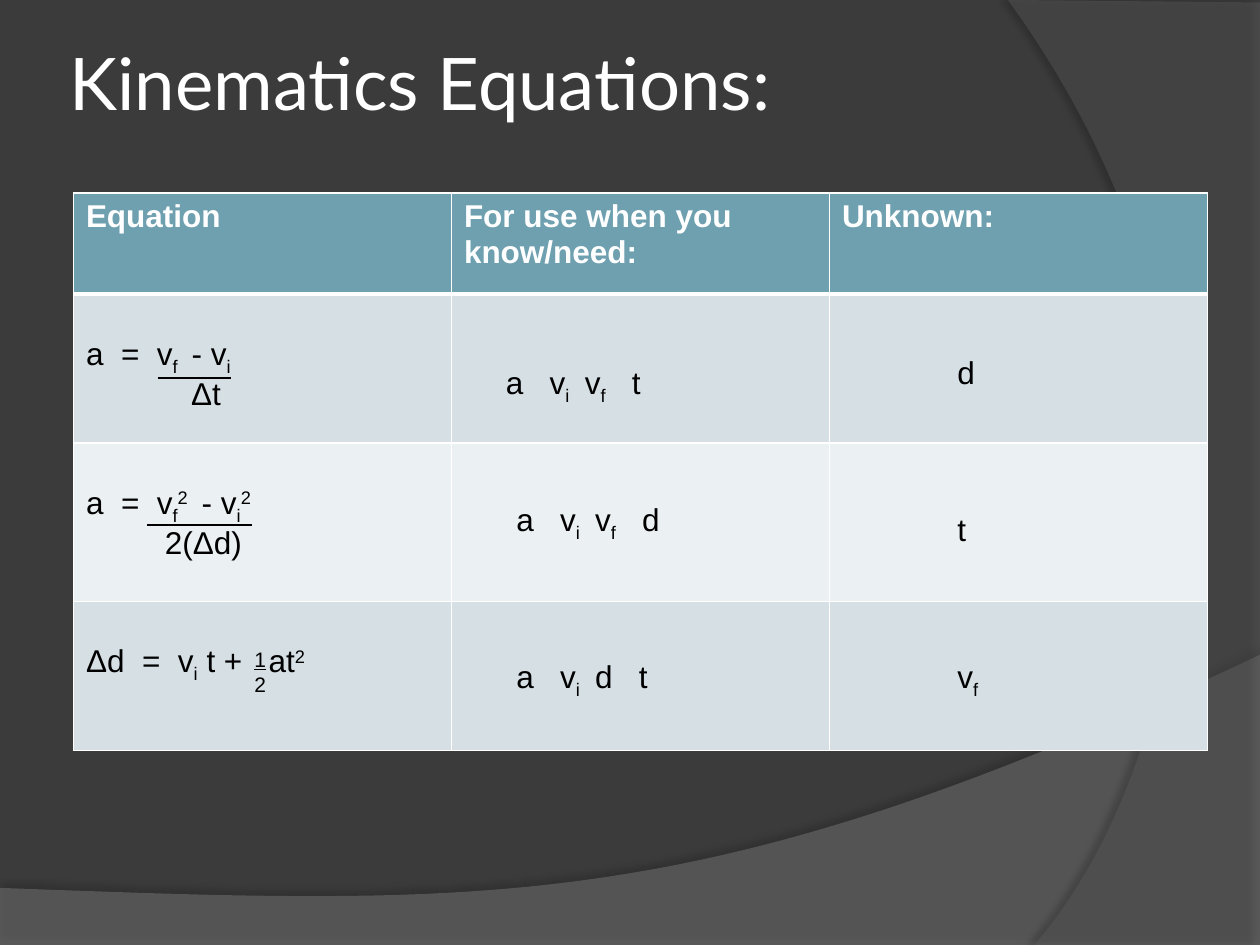
from dataclasses import dataclass

from lxml import etree
from pptx import Presentation
from pptx.dml.color import RGBColor
from pptx.enum.shapes import MSO_CONNECTOR
from pptx.enum.text import MSO_ANCHOR, MSO_AUTO_SIZE
from pptx.oxml.ns import qn
from pptx.util import Cm, Pt

STRAIGHT = MSO_CONNECTOR.STRAIGHT
MIDDLE = MSO_ANCHOR.MIDDLE
GROW = MSO_AUTO_SIZE.SHAPE_TO_FIT_TEXT

WIDTH, HEIGHT = 25.4, 19.05
BASELINES = {"_": "-25000", "^": "30000"}
WHITE, BLACK, HEADER_FILL = "FFFFFF", "000000", "6EA0B0"
BAND_FILLS = ("D5DFE4", "EBF0F2")
TABLE_LEFT, TABLE_TOP, COLUMN_WIDTH = 1.48, 3.89, 7.62
ROW_HEIGHTS = (2.04, 3, 3.2, 3)


@dataclass
class Equation:
    numerator: tuple[str, ...]
    denominator: str = ""
    indent: float = 0


@dataclass
class Label:
    left: float
    top: float
    width: float
    symbols: tuple[str, ...]


@dataclass
class Swoosh:
    """Outline of corner points closed by one cubic curve."""
    corners: list[tuple[float, float]]
    controls: list[tuple[float, float]]
    fill: str
    opacity: int
    shadow_opacity: int
    shadow_direction: int


HEADINGS = ("Equation", "For use when you know/need:", "Unknown:")
EQUATIONS = (
    Equation(("a  =  v", "_f ", " - v", "_i"), "Δt", 2.12),
    Equation(("a  =  v", "_f", "^2 ", " - v", "_i", "^2"), "2(Δd)", 1.59),
    Equation(("Δd  =  v", "_i", " t +   at", "^2")),
)
FRACTION_BARS = ((3.18, 4.66, 7.62), (2.96, 5.08, 10.58))
LABELS = (
    Label(9.95, 7.2, 3.68, ("a   v", "_i   ", "v", "_f", "   t")),
    Label(10.16, 9.95, 3.86, ("a   v", "_i   ", "v", "_f", "   d")),
    Label(10.16, 13.12, 3.61, ("a   v", "_i   ", "d   t")),
    Label(19.05, 6.99, 0.86, ("d",)),
    Label(19.05, 10.16, 0.86, ("t",)),
    Label(19.05, 13.12, 1.14, ("v", "_f")),
)
SWOOSHES = (
    Swoosh([(0, 17.9), (0, HEIGHT), (WIDTH, HEIGHT), (WIDTH, 13.2)],
           [(14.2, 18.52), (9.93, 18.26), (0, 17.9)], "7F7F7F", 45, 35, 270),
    Swoosh([(WIDTH, 0.05), (WIDTH, HEIGHT), (20.85, HEIGHT)],
           [(23.75, 15.72), (25.86, 7.62), (20.32, 0)], "5E5E5E", 40, 45, 180),
)


def color(value: str) -> RGBColor:
    return RGBColor.from_string(value)


def add_node(parent, tag: str, **attributes):
    return etree.SubElement(parent, qn(tag), attributes)


def write(paragraph, *pieces: str, size: float = 18, font: str = "Arial",
          fill: str = BLACK, bold: bool = False, underline: bool = False) -> None:
    """Add one run per piece; a leading _ lowers it and a leading ^ raises it."""
    for piece in pieces:
        run = paragraph.add_run()
        baseline = BASELINES.get(piece[0])
        run.text = piece[1:] if baseline else piece
        run.font.size = Pt(size)
        run.font.name = font
        run.font.bold = bold
        run.font.underline = underline
        run.font.color.rgb = color(fill)
        if baseline:
            run._r.get_or_add_rPr().set("baseline", baseline)


def add_text_frame(slide, left: float, top: float, width: float, height: float,
                   wrap: bool = True):
    frame = slide.shapes.add_textbox(Cm(left), Cm(top), Cm(width), Cm(height)).text_frame
    frame.word_wrap = wrap
    return frame


def add_swoosh(slide, swoosh: Swoosh, steps: int = 48) -> None:
    curve = [swoosh.corners[-1], *swoosh.controls]
    points = list(swoosh.corners)
    for step in range(1, steps + 1):
        t = step / steps
        weights = ((1 - t) ** 3, 3 * t * (1 - t) ** 2, 3 * t * t * (1 - t), t ** 3)
        points.append(tuple(sum(w * p[axis] for w, p in zip(weights, curve))
                            for axis in (0, 1)))
    points = [(Cm(x), Cm(y)) for x, y in points]
    builder = slide.shapes.build_freeform(*points[0])
    builder.add_line_segments(points[1:], close=True)
    shape = builder.convert_to_shape()
    shape.fill.solid()
    shape.fill.fore_color.rgb = color(swoosh.fill)
    shape.line.fill.background()
    shape.shadow.inherit = False
    properties = shape._element.spPr
    add_node(properties.find(qn("a:solidFill"))[0], "a:alpha", val=str(swoosh.opacity * 1000))
    shadow = add_node(properties.find(qn("a:effectLst")), "a:outerShdw",
                      blurRad=str(Pt(4)), dist=str(Pt(4)),
                      dir=str(swoosh.shadow_direction * 60000), rotWithShape="0")
    shadow_color = add_node(shadow, "a:srgbClr", val=BLACK)
    add_node(shadow_color, "a:alpha", val=str(swoosh.shadow_opacity * 1000))


def style_cell(cell, fill: str, top: float = 1, bottom: float = 1) -> None:
    properties = cell._tc.get_or_add_tcPr()
    for side, width in (("L", 1), ("R", 1), ("T", top), ("B", bottom)):
        line = add_node(properties, f"a:ln{side}", w=str(Pt(width)))
        add_node(add_node(line, "a:solidFill"), "a:srgbClr", val=WHITE)
    cell.fill.solid()
    cell.fill.fore_color.rgb = color(fill)


def add_equation_table(slide) -> None:
    columns = len(HEADINGS)
    table = slide.shapes.add_table(
        len(ROW_HEIGHTS), columns, Cm(TABLE_LEFT), Cm(TABLE_TOP),
        Cm(COLUMN_WIDTH * columns), Cm(sum(ROW_HEIGHTS))).table
    for row, height in zip(table.rows, ROW_HEIGHTS):
        row.height = Cm(height)
    for index, heading in enumerate(HEADINGS):
        table.columns[index].width = Cm(COLUMN_WIDTH)
        cell = table.cell(0, index)
        style_cell(cell, HEADER_FILL, bottom=3)
        write(cell.text_frame.paragraphs[0], heading, fill=WHITE, bold=True)
    for index, equation in enumerate(EQUATIONS, start=1):
        for column in range(columns):
            style_cell(table.cell(index, column), BAND_FILLS[(index - 1) % 2],
                       top=3 if index == 1 else 1)
        cell = table.cell(index, 0)
        cell.margin_top = Cm(0.86)
        write(cell.text_frame.paragraphs[0], *equation.numerator)
        if equation.denominator:
            paragraph = cell.text_frame.add_paragraph()
            paragraph._p.get_or_add_pPr().set("marL", str(Cm(equation.indent)))
            write(paragraph, equation.denominator)


def add_fraction_bar(slide, left: float, right: float, y: float) -> None:
    bar = slide.shapes.add_connector(STRAIGHT, Cm(left), Cm(y), Cm(right), Cm(y))
    bar.line.color.rgb = color(BLACK)
    bar.line.width = Pt(1.5)
    add_node(bar._element.spPr, "a:effectLst")


def add_label(slide, label: Label) -> None:
    frame = add_text_frame(slide, label.left, label.top, label.width, 1.02, wrap=False)
    frame.auto_size = GROW
    write(frame.paragraphs[0], *label.symbols)


def main() -> None:
    presentation = Presentation()
    presentation.slide_width, presentation.slide_height = Cm(WIDTH), Cm(HEIGHT)
    slide = presentation.slides.add_slide(presentation.slide_layouts[6])
    slide.background.fill.solid()
    slide.background.fill.fore_color.rgb = color("3B3B3B")
    for swoosh in SWOOSHES:
        add_swoosh(slide, swoosh)

    title = add_text_frame(slide, 1.27, 0.76, 20.75, 1.78)
    title.vertical_anchor = MIDDLE
    title.margin_left = title.margin_right = Cm(0.13)
    write(title.paragraphs[0], "Kinematics Equations:", size=41.4, font="Lato", fill=WHITE)

    add_equation_table(slide)
    for bar in FRACTION_BARS:
        add_fraction_bar(slide, *bar)
    half = add_text_frame(slide, 4.88, 12.9, 0.74, 1.27)
    write(half.paragraphs[0], "1", size=12, underline=True)
    write(half.add_paragraph(), "2", size=12)
    for label in LABELS:
        add_label(slide, label)
    presentation.save("out.pptx")


if __name__ == "__main__":
    main()
